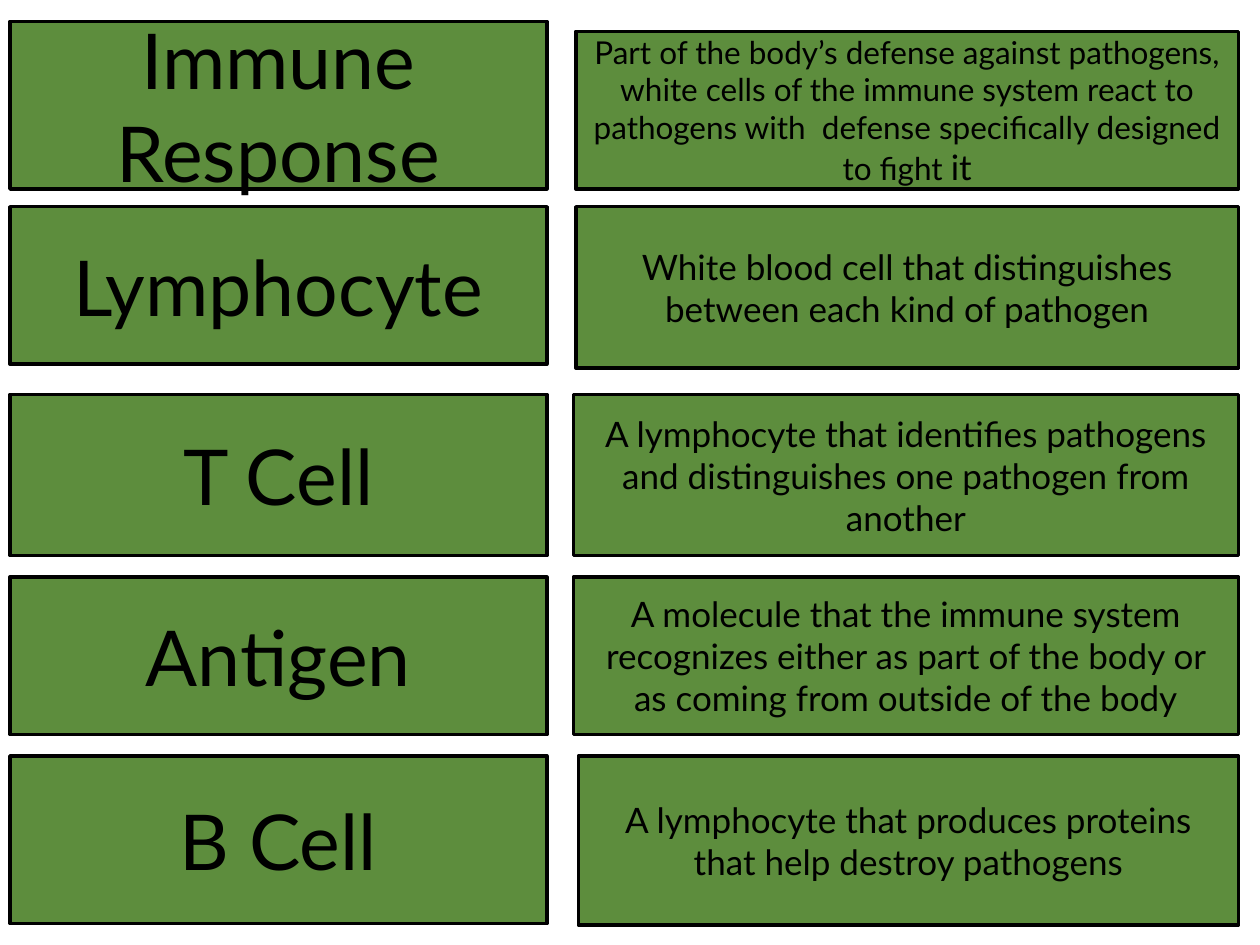
from pptx import Presentation
from pptx.dml.color import RGBColor
from pptx.enum.shapes import MSO_SHAPE as Shape
from pptx.enum.text import MSO_ANCHOR as Anchor, PP_ALIGN as Align
from pptx.util import Inches, Pt

GREEN = RGBColor(0x5D, 0x8D, 0x3D)
BLACK = RGBColor(0x00, 0x00, 0x00)
FONT = "Lato"

TERM_LEFT, TERM_WIDTH = 0.08, 4.26
DEFINITION_RIGHT = 9.83
TERM_SIZE, DEFINITION_SIZE, LONG_SIZE = 44, 20, 18

# term, (top, height), definition runs with sizes, (left, top, height)
GLOSSARY = [
    ("Immune Response", (0.17, 1.33),
     [("Part of the body’s defense against pathogens, white cells of the "
       "immune system react to pathogens with  defense specifically "
       "designed to fight ", LONG_SIZE), ("it", DEFINITION_SIZE)],
     (4.57, 0.25, 1.25)),
    ("Lymphocyte", (1.64, 1.25),
     [("White blood cell that distinguishes between each kind of pathogen",
       DEFINITION_SIZE)],
     (4.57, 1.64, 1.28)),
    ("T Cell", (3.13, 1.28),
     [("A lymphocyte that identifies pathogens and distinguishes one "
       "pathogen from another", DEFINITION_SIZE)],
     (4.55, 3.13, 1.28)),
    ("Antigen", (4.58, 1.25),
     [("A molecule that the immune system recognizes either as part of the "
       "body or as coming from outside of the body", DEFINITION_SIZE)],
     (4.55, 4.58, 1.25)),
    ("B Cell", (6, 1.33),
     [("A lymphocyte that produces proteins that help destroy pathogens",
       DEFINITION_SIZE)],
     (4.59, 6, 1.34)),
]


def add_card(slide, box, runs):
    """Draw a green card holding one centred paragraph of (text, size) runs."""
    card = slide.shapes.add_shape(Shape.FLOWCHART_PROCESS, *map(Inches, box))
    card.shadow.inherit = False
    card.fill.solid()
    card.fill.fore_color.rgb = GREEN
    card.line.color.rgb = BLACK
    card.line.width = Pt(2)
    card.text_frame.word_wrap = True
    card.text_frame.vertical_anchor = Anchor.MIDDLE
    paragraph = card.text_frame.paragraphs[0]
    paragraph.alignment = Align.CENTER
    for text, size in runs:
        run = paragraph.add_run()
        run.text = text
        run.font.name = FONT
        run.font.size = Pt(size)
        run.font.color.rgb = BLACK


def add_entry(slide, term, term_rows, definition, definition_box):
    """Place a term card and its definition card side by side."""
    top, height = term_rows
    add_card(slide, (TERM_LEFT, top, TERM_WIDTH, height), [(term, TERM_SIZE)])
    left, top, height = definition_box
    add_card(slide, (left, top, DEFINITION_RIGHT - left, height), definition)


def main():
    deck = Presentation()
    deck.slide_width, deck.slide_height = Inches(10), Inches(7.5)
    slide = deck.slides.add_slide(deck.slide_layouts[6])
    for entry in GLOSSARY:
        add_entry(slide, *entry)
    deck.save("out.pptx")


if __name__ == "__main__":
    main()
